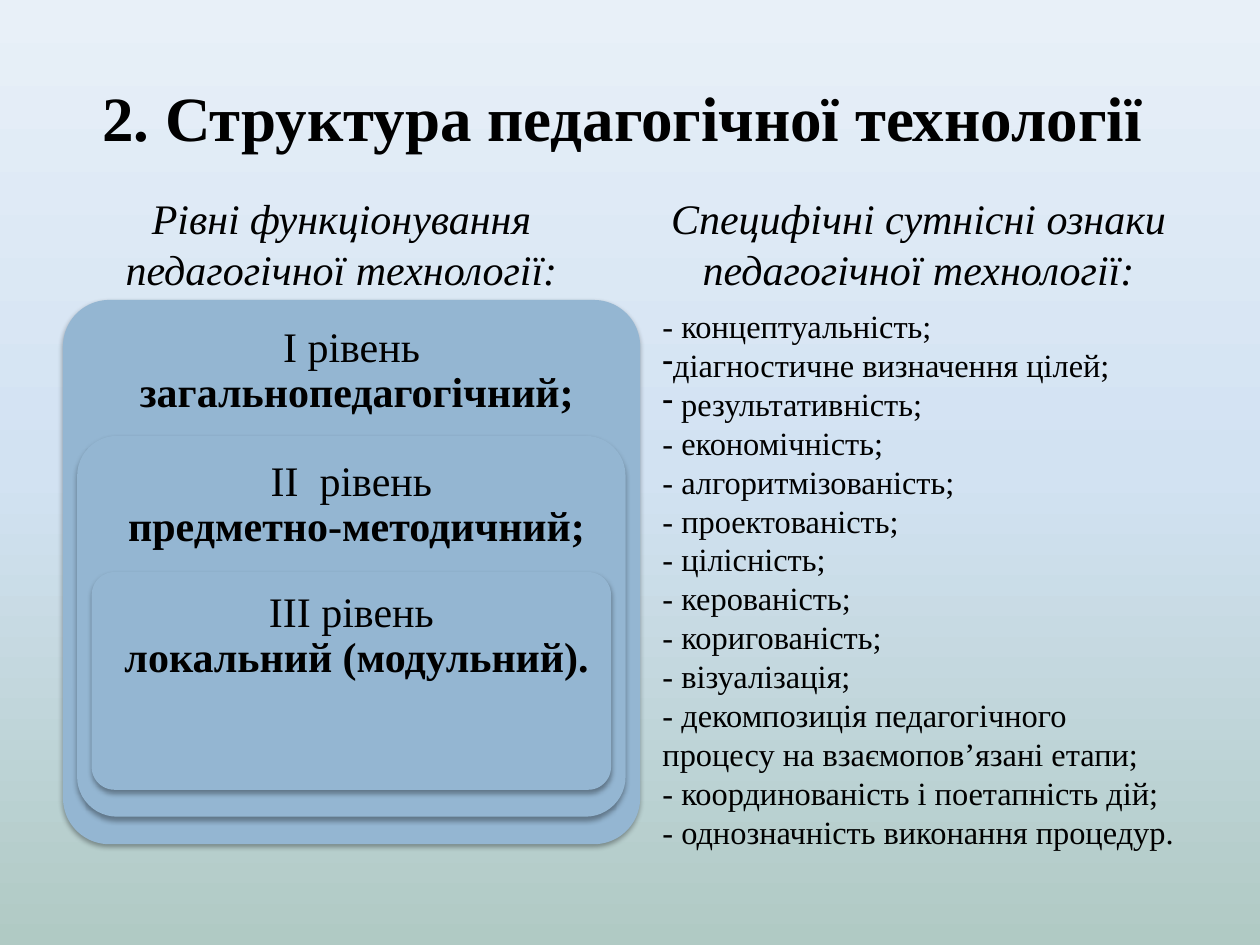
from copy import deepcopy

from lxml import etree
from pptx import Presentation
from pptx.dml.color import RGBColor
from pptx.enum.shapes import MSO_SHAPE
from pptx.enum.text import MSO_ANCHOR, PP_ALIGN
from pptx.oxml.ns import qn
from pptx.util import Pt

ROUNDED = MSO_SHAPE.ROUNDED_RECTANGLE
TOP, MIDDLE, BOTTOM = MSO_ANCHOR.TOP, MSO_ANCHOR.MIDDLE, MSO_ANCHOR.BOTTOM
LEFT, CENTER = PP_ALIGN.LEFT, PP_ALIGN.CENTER

FONT, BLACK, BLUE = "Times New Roman", "000000", "94B6D2"
BACKGROUND = [(0, "B0CAC4"), (0.5, "D2E2F2"), (1, "E8F0F8")]
TITLE = "2. Структура педагогічної технології "
HEADINGS = [
    (36, "Рівні функціонування педагогічної технології:"),
    (365.76, "Специфічні сутнісні ознаки педагогічної технології:"),
]
LEVELS = [
    ("І рівень", "загальнопедагогічний;", (36, 171.4, 329.8, 311), 0.085),
    ("ІІ  рівень", "предметно-методичний;", (44.1, 249.1, 313.4, 217.6), 0.105),
    ("ІІІ рівень", "локальний (модульний).", (52.4, 326.9, 296.8, 124.4), 0.105),
]
FEATURES = [
    ("", "- концептуальність;"),
    ("-", "діагностичне визначення цілей;"),
    ("-", " результативність;"),
    ("", "- економічність;"),
    ("", "- алгоритмізованість;"),
    ("", "- проектованість;"),
    ("", "- цілісність;"),
    ("", "- керованість;"),
    ("", "- коригованість;"),
    ("", "- візуалізація;"),
    ("", "- декомпозиція педагогічного процесу на взаємопов’язані етапи;"),
    ("", "- координованість і поетапність дій;"),
    ("", "- однозначність виконання процедур."),
]


def rgb(code):
    return RGBColor.from_string(code)


def style(p, size, align=LEFT, bold=None, italic=None):
    p.alignment = align
    f = p.font
    f.name, f.size, f.bold, f.italic = FONT, Pt(size), bold, italic
    f.color.rgb = rgb(BLACK)


def text_box(s, box, anchor):
    tf = s.shapes.add_textbox(*map(Pt, box)).text_frame
    tf.word_wrap, tf.vertical_anchor = True, anchor
    return tf


def add_background(s):
    fill = s.background.fill
    fill.gradient()
    fill.gradient_angle = 90
    stops = s._element.find(".//" + qn("a:gsLst"))
    stops.append(deepcopy(stops[0]))
    for stop, (position, color) in zip(fill.gradient_stops, BACKGROUND):
        stop.position = position
        stop.color.rgb = rgb(color)


def add_shadow(sp):
    sp.shadow.inherit = False
    effects = sp._element.spPr.find(qn("a:effectLst"))
    shadow = etree.SubElement(effects, qn("a:outerShdw"), blurRad=str(Pt(3.1)),
                              dist=str(Pt(1.8)), dir="5400000", rotWithShape="0")
    color = etree.SubElement(shadow, qn("a:srgbClr"), val=BLACK)
    etree.SubElement(color, qn("a:alpha"), val="35000")


def add_level(s, name, kind, box, corner):
    sp = s.shapes.add_shape(ROUNDED, *map(Pt, box))
    sp.adjustments[0] = corner
    sp.fill.solid()
    sp.fill.fore_color.rgb = rgb(BLUE)
    sp.line.fill.background()
    add_shadow(sp)
    tf = sp.text_frame
    tf.word_wrap, tf.vertical_anchor = True, TOP
    tf.margin_left = tf.margin_right = tf.margin_top = tf.margin_bottom = Pt(7.2)
    tf.text = f"{name}\n {kind}"
    for p, bold in zip(tf.paragraphs, (False, True)):
        style(p, 24, CENTER, bold=bold)
        p.line_spacing = 0.9


def add_features(s):
    tf = text_box(s, (371.5, 171.4, 312.5, 311), TOP)
    tf.text = "\n".join(text for _, text in FEATURES)
    for p, (bullet, _) in zip(tf.paragraphs, FEATURES):
        if bullet:
            etree.SubElement(p._p.get_or_add_pPr(), qn("a:buChar"), char=bullet)
        style(p, 18.5)


def main():
    """Build the slide on the structure of pedagogical technology."""
    prs = Presentation()
    prs.slide_width, prs.slide_height = Pt(720), Pt(540)
    s = prs.slides.add_slide(prs.slide_layouts[5])
    add_background(s)
    title = s.shapes.title
    title.left, title.top, title.width, title.height = map(Pt, (36, 21.6, 648, 90))
    title.text_frame.text = TITLE
    title.text_frame.vertical_anchor = MIDDLE
    style(title.text_frame.paragraphs[0], 36, CENTER, bold=True)
    for left, heading in HEADINGS:
        tf = text_box(s, (left, 111.6, 318.24, 59.8), BOTTOM)
        tf.text = heading
        style(tf.paragraphs[0], 24, CENTER, italic=True)
    for level in LEVELS:
        add_level(s, *level)
    add_features(s)
    prs.save("out.pptx")


if __name__ == "__main__":
    main()
